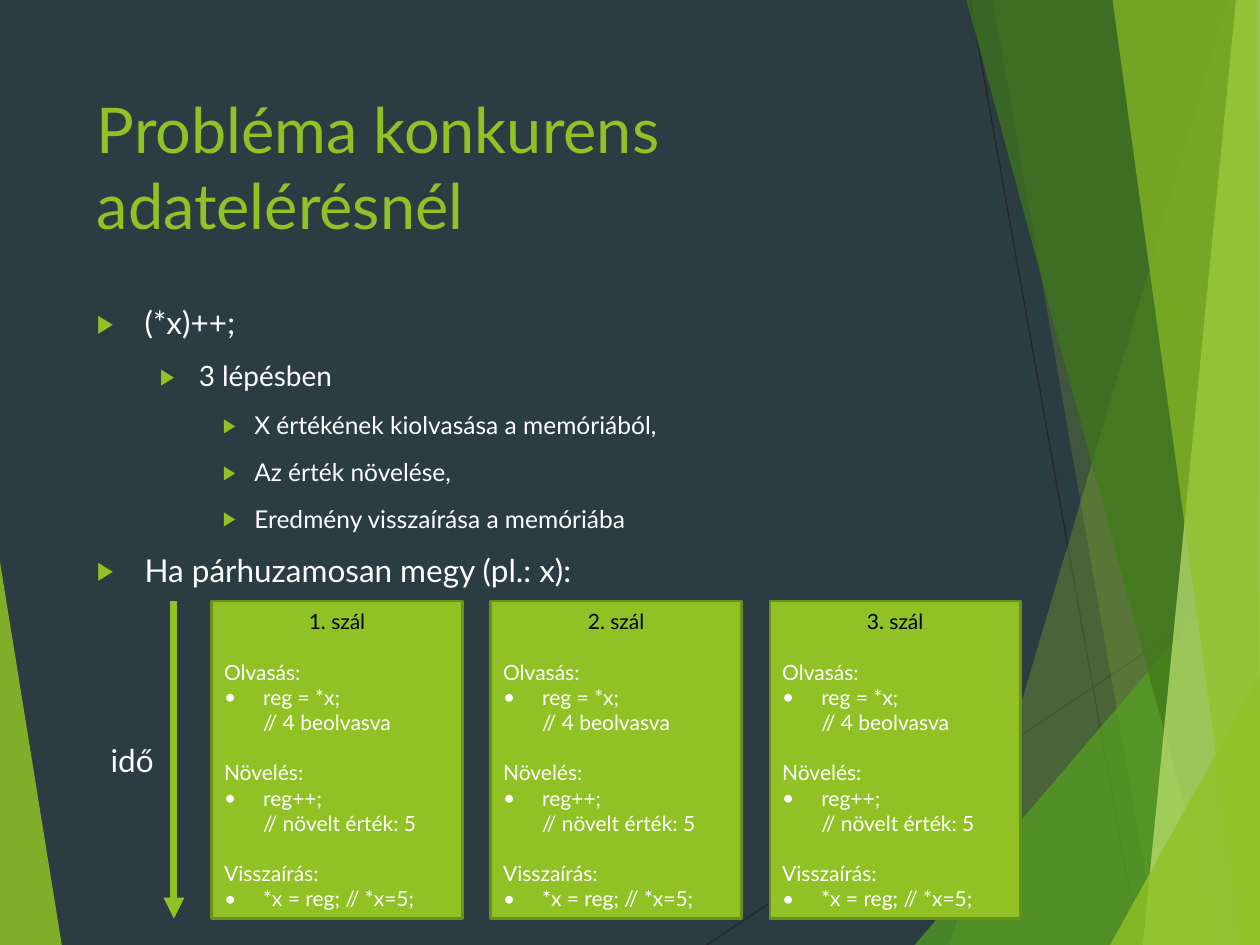
from dataclasses import dataclass

from lxml.etree import SubElement
from pptx import Presentation
from pptx.dml.color import RGBColor
from pptx.enum.shapes import MSO_CONNECTOR as Connector, MSO_SHAPE as Preset
from pptx.enum.text import MSO_ANCHOR as Anchor, PP_ALIGN as Align
from pptx.oxml.ns import qn
from pptx.util import Inches, Pt


@dataclass(frozen=True)
class Theme:
    font: str = "Lato"
    ground: str = "2C3C43"
    lime: str = "90C226"
    lime_edge: str = "6B901C"
    grass: str = "54A021"
    forest: str = "3F7819"
    pale: str = "C0E474"
    hairline: str = "262626"
    light: str = "FFFFFF"
    dark: str = "000000"
    title_size: int = 36
    level_sizes: tuple = (18, 16, 14)
    level_indents: tuple = ((0.38, 0.38), (0.81, 0.31), (1.25, 0.25))
    step_indent: tuple = (0.31, 0.31)
    outline_gap: float = 10
    box_size: float = 12
    step_gap: float = 14.4


class Deck:
    """Draws themed elements on a grid of 100 columns by 75 rows."""

    def __init__(self, theme):
        self.theme = theme
        self.show = Presentation()
        self.show.slide_width, self.show.slide_height = Inches(10), Inches(7.5)
        self.column = self.show.slide_width / 100
        self.row = self.show.slide_height / 75
        self.slide = self.show.slides.add_slide(self.show.slide_layouts[6])
        self.paint(self.slide.background.fill, theme.ground)
        self.shapes = self.slide.shapes

    def grid(self, *lengths):
        units = (self.column, self.row)
        return [round(length * units[i % 2]) for i, length in enumerate(lengths)]

    def paint(self, fill, color):
        fill.solid()
        fill.fore_color.rgb = RGBColor.from_string(color)

    def facet(self, points, color, opacity):
        corners = [self.grid(*point) for point in points]
        builder = self.shapes.build_freeform(*corners[0])
        builder.add_line_segments(corners[1:], close=True)
        facet = builder.convert_to_shape()
        facet.shadow.inherit = False
        facet.line.fill.background()
        self.paint(facet.fill, color)
        tint = facet._element.spPr.find(qn("a:solidFill"))[0]
        SubElement(tint, qn("a:alpha"), val=str(opacity * 1000))

    def line(self, start, end, color, width, arrow=False):
        line = self.shapes.add_connector(
            Connector.STRAIGHT, *self.grid(*start), *self.grid(*end))
        line.line.width = Pt(width)
        self.paint(line.line.fill, color)
        props = line._element.spPr
        SubElement(props, qn("a:effectLst"))
        if arrow:
            SubElement(props.find(qn("a:ln")), qn("a:tailEnd"), type="triangle")

    def bullet(self, paragraph, sign, indent, color=None, percent=100):
        left, hanging = indent
        props = paragraph._p.get_or_add_pPr()
        props.set("marL", str(Inches(left)))
        props.set("indent", str(-Inches(hanging)))
        if color:
            SubElement(SubElement(props, qn("a:buClr")), qn("a:srgbClr"), val=color)
        SubElement(props, qn("a:buSzPct"), val=str(percent * 1000))
        SubElement(props, qn("a:buFont"), typeface=self.theme.font)
        SubElement(props, qn("a:buChar"), char=sign)

    def fill_in(self, paragraph, words, size, color, align=Align.LEFT, gap=0):
        paragraph.text = words
        paragraph.alignment = align
        paragraph.space_before = Pt(gap)
        for run in paragraph.runs:
            run.font.name, run.font.size = self.theme.font, Pt(size)
            run.font.color.rgb = RGBColor.from_string(color)

    def paragraphs(self, frame, count):
        return [frame.paragraphs[0]] + [frame.add_paragraph() for _ in range(count - 1)]

    def text(self, area, words, size, color, wrap=True):
        frame = self.shapes.add_textbox(*self.grid(*area)).text_frame
        frame.word_wrap = wrap
        self.fill_in(frame.paragraphs[0], words, size, color)

    def outline(self, area, items):
        theme = self.theme
        frame = self.shapes.add_textbox(*self.grid(*area)).text_frame
        frame.word_wrap = True
        for paragraph, (level, words) in zip(self.paragraphs(frame, len(items)), items):
            paragraph.level = level
            self.fill_in(paragraph, words, theme.level_sizes[level], theme.light,
                         gap=theme.outline_gap)
            self.bullet(paragraph, "▶", theme.level_indents[level], theme.lime, 80)

    def thread(self, area, heading, steps):
        theme = self.theme
        box = self.shapes.add_shape(Preset.RECTANGLE, *self.grid(*area))
        box.shadow.inherit = False
        self.paint(box.fill, theme.lime)
        self.paint(box.line.fill, theme.lime_edge)
        box.line.width = Pt(1.5)
        frame = box.text_frame
        frame.word_wrap, frame.vertical_anchor = True, Anchor.MIDDLE
        first, *rest = self.paragraphs(frame, 1 + 2 * len(steps))
        self.fill_in(first, heading, theme.box_size, theme.dark, Align.CENTER)
        for label, code, (name, action) in zip(rest[::2], rest[1::2], steps):
            self.fill_in(label, name, theme.box_size, theme.light, gap=theme.step_gap)
            self.fill_in(code, action, theme.box_size, theme.light)
            self.bullet(code, "•", theme.step_indent)


def main():
    theme = Theme()
    deck = Deck(theme)
    deck.line((56.1, 75), (100, 45.7), theme.hairline, 0.75)
    deck.line((77, 0), (90.4, 75), theme.hairline, 0.75)
    facets = [
        ([(0, 44.6), (4.9, 75), (0, 75)], theme.lime, 85),
        ([(97.5, 0), (75.4, 75), (100, 75), (100, 0)], theme.lime, 30),
        ([(78.8, 0), (91.9, 75), (100, 75), (100, 0)], theme.lime, 20),
        ([(72.6, 75), (100, 42.9), (100, 75)], theme.grass, 72),
        ([(76.7, 0), (97, 75), (100, 75), (100, 0)], theme.forest, 70),
        ([(98.1, 0), (90.7, 75), (100, 75), (100, 0)], theme.pale, 70),
        ([(88.3, 0), (98.6, 75), (100, 75), (99.8, 0)], theme.lime, 65),
        ([(88.1, 75), (100, 53.5), (100, 75)], theme.lime, 80),
    ]
    for points, color, opacity in facets:
        deck.facet(points, color, opacity)

    deck.text((6.7, 6.7, 69.4, 14.4), "Probléma konkurens adatelérésnél",
              theme.title_size, theme.lime)
    deck.outline((6.7, 23.6, 69.4, 45.4), [
        (0, "(*x)++;"),
        (1, "3 lépésben"),
        (2, "X értékének kiolvasása a memóriából,"),
        (2, "Az érték növelése,"),
        (2, "Eredmény visszaírása a memóriába"),
        (0, "Ha párhuzamosan megy (pl.: x):"),
    ])

    steps = [
        ("Olvasás:", "reg = *x;\v// 4 beolvasva"),
        ("Növelés:", "reg++;\v// növelt érték: 5"),
        ("Visszaírás:", "*x = reg; // *x=5;"),
    ]
    top, height = 47.7, 25.2
    for index in range(3):
        deck.thread((16.8 + 22.15 * index, top, 19.9, height),
                    f"{index + 1}. szál", steps)
    deck.line((13.8, top), (13.8, top + height), theme.lime, 4, arrow=True)
    deck.text((7.8, 58.3, 5.5, 4), "idő", theme.level_sizes[0], theme.light, wrap=False)
    deck.show.save("out.pptx")


if __name__ == "__main__":
    main()
